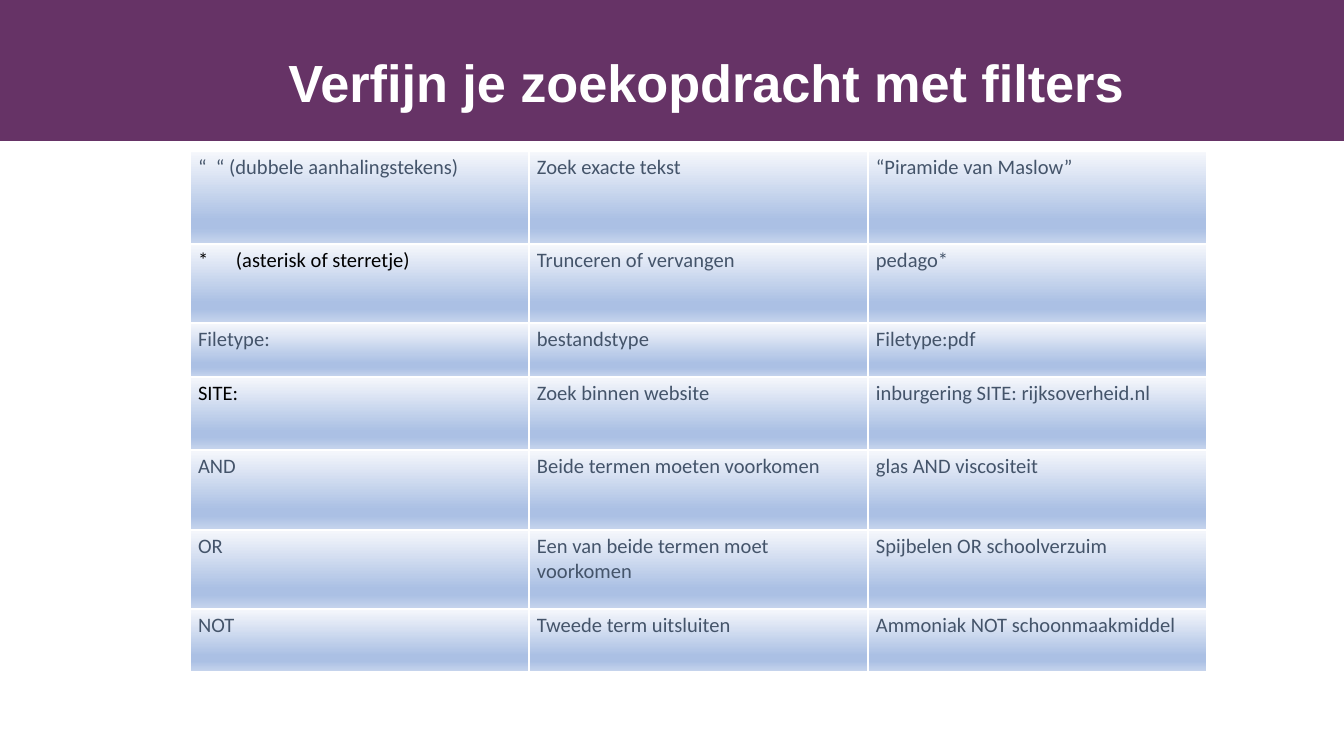
from lxml import etree
from pptx import Presentation
from pptx import util as u
from pptx.dml.color import RGBColor
from pptx.enum import shapes, text
from pptx.oxml import ns

EMU_PER_PX = 914400 / 134.4
PURPLE, WHITE, BLACK, SLATE = "663366", "FFFFFF", "000000", "44546A"
GRADIENT = [(0, "F6F8FC"), (74, "ABC0E4"), (83, "ABC0E4"), (100, "C7D5ED")]
ROW_HEIGHTS = [93, 79, 54, 73, 80, 79, 63]
FILTERS = [
    ("“  “ (dubbele aanhalingstekens)", "Zoek exacte tekst", "“Piramide van Maslow”"),
    ("*\t(asterisk of sterretje)", "Trunceren of vervangen", "pedago*"),
    ("Filetype:", "bestandstype", "Filetype:pdf"),
    ("SITE:", "Zoek binnen website", "inburgering SITE: rijksoverheid.nl"),
    ("AND", "Beide termen moeten voorkomen", "glas AND viscositeit"),
    ("OR", "Een van beide termen moet voorkomen", "Spijbelen OR schoolverzuim"),
    ("NOT", "Tweede term uitsluiten", "Ammoniak NOT schoonmaakmiddel"),
]
BLACK_ROWS = {1, 3}  # rows whose operator is black


def px(length):
    return u.Emu(round(length * EMU_PER_PX))


def color(value):
    return RGBColor.from_string(value)


def add_element(parent, tag, **attributes):
    element = etree.SubElement(parent, ns.qn(tag))
    for name, value in attributes.items():
        element.set(name, str(value))
    return element


def write(frame, content, font="Calibri", size=11, fill=SLATE, bold=False, tab=None):
    paragraph = frame.paragraphs[0]
    paragraph.alignment = text.PP_ALIGN.LEFT
    if tab:
        tabs = add_element(paragraph._p.get_or_add_pPr(), "a:tabLst")
        add_element(tabs, "a:tab", pos=px(tab), algn="l")
    run = paragraph.add_run()
    run.text = content
    run.font.name, run.font.size, run.font.bold = font, u.Pt(size), bold
    run.font.color.rgb = color(fill)


def style_cell(cell):
    cell.margin_left = cell.margin_right = px(8)
    cell.margin_top = cell.margin_bottom = px(4)
    properties = cell._tc.get_or_add_tcPr()
    # White borders
    for side in ("a:lnL", "a:lnR", "a:lnT", "a:lnB"):
        line = add_element(properties, side, w=u.Pt(1))
        add_element(add_element(line, "a:solidFill"), "a:srgbClr", val=WHITE)
    # Vertical gradient
    gradient = add_element(properties, "a:gradFill", rotWithShape=1)
    stops = add_element(gradient, "a:gsLst")
    for position, value in GRADIENT:
        stop = add_element(stops, "a:gs", pos=position * 1000)
        add_element(stop, "a:srgbClr", val=value)
    add_element(gradient, "a:lin", ang=90 * 60000, scaled=0)


def add_header(slide, left, top, width, height):
    # Band, placed behind the title
    band = slide.shapes.add_shape(shapes.MSO_SHAPE.RECTANGLE,
                                  px(left), px(top), px(width), px(height))
    band.shadow.inherit = False
    band.fill.solid()
    band.fill.fore_color.rgb = color(PURPLE)
    band.line.fill.background()
    slide.shapes._spTree.insert(2, band._element)
    # Title
    title = slide.shapes.title
    title.left, title.top = px(left + 275), px(top + 43)
    title.width, title.height = px(878), px(77)
    frame = title.text_frame
    frame.word_wrap = True
    frame.auto_size = text.MSO_AUTO_SIZE.NONE
    frame.vertical_anchor = text.MSO_ANCHOR.MIDDLE
    write(frame, "Verfijn je zoekopdracht met filters",
          font="Arial", size=28, fill=WHITE, bold=True)


def add_filter_table(slide, left, top, width):
    columns = len(FILTERS[0])
    table = slide.shapes.add_table(len(FILTERS), columns, px(left), px(top),
                                   px(width), px(sum(ROW_HEIGHTS))).table
    table.first_row = table.horz_banding = False
    for column in table.columns:
        column.width = px(width / columns)
    for row, (height, contents) in enumerate(zip(ROW_HEIGHTS, FILTERS)):
        table.rows[row].height = px(height)
        for column, content in enumerate(contents):
            cell = table.cell(row, column)
            style_cell(cell)
            is_black = column == 0 and row in BLACK_ROWS
            write(cell.text_frame, content, fill=BLACK if is_black else SLATE,
                  tab=38 if "\t" in content else None)


def main():
    presentation = Presentation()
    presentation.slide_width, presentation.slide_height = px(1344), px(756)
    slide = presentation.slides.add_slide(presentation.slide_layouts[5])
    add_header(slide, 0, 0, 1344, 141)
    add_filter_table(slide, 190, 151, 1017)
    presentation.save("out.pptx")


if __name__ == "__main__":
    main()
